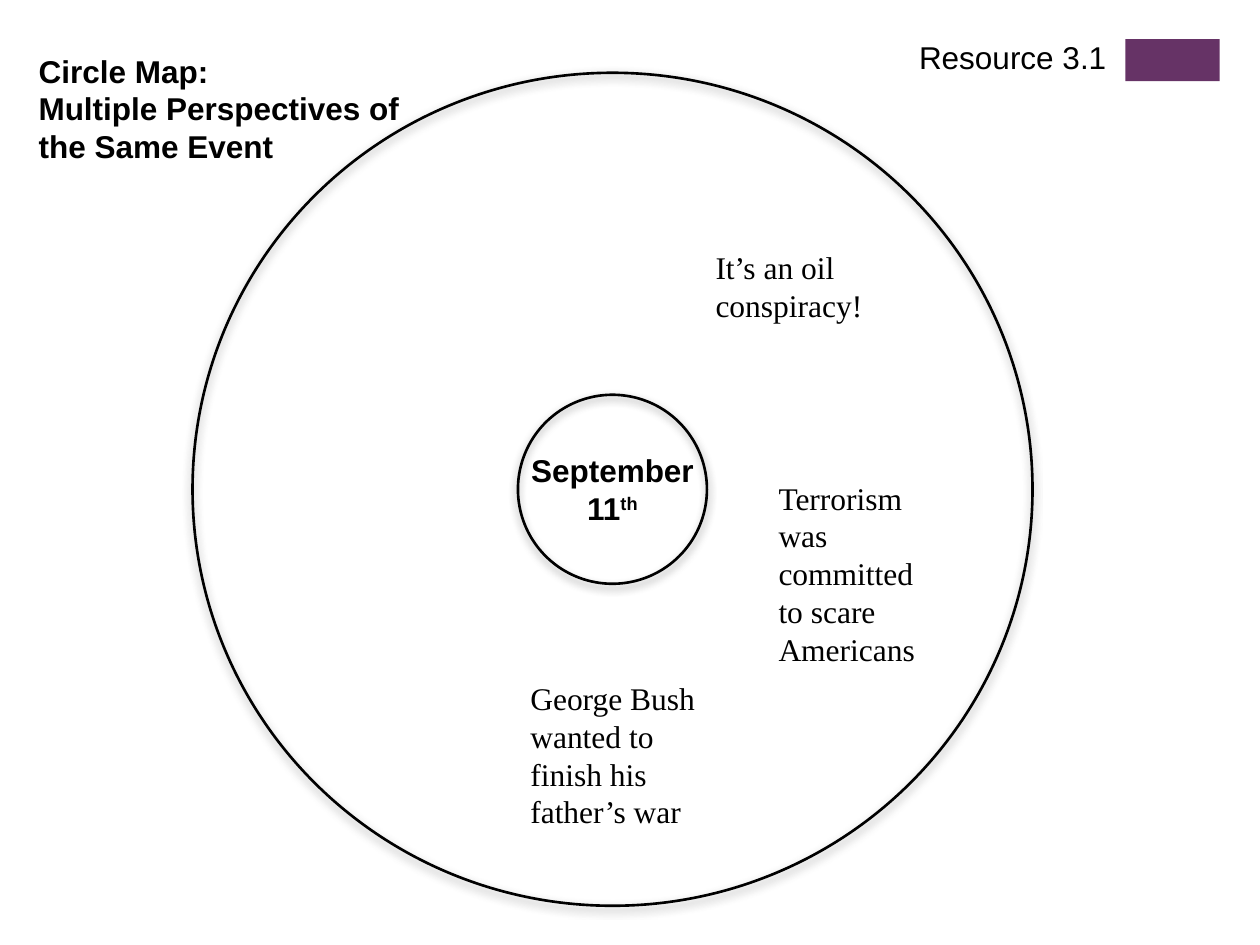
"""Build a circle map slide about perspectives on September 11th."""
import lxml.etree
import pptx
import pptx.dml.color
import pptx.enum.shapes
import pptx.enum.text
import pptx.oxml.ns
import pptx.util

Pt = pptx.util.Pt
SHAPE = pptx.enum.shapes.MSO_SHAPE
ALIGN = pptx.enum.text.PP_ALIGN

SLIDE_SIZE = (720, 540)
BLACK, PURPLE, GRAY = "000000", "663366", "808080"
CENTER = (350, 279.6)
RINGS = [(480, 476), (108, 108)]
TAB = (643, 22.3, 54, 24)

EVENT = [[("September 11", False), ("th", True)]]
EVENT_SIZE = (108, 51)
TITLE = ["Circle Map:", "Multiple Perspectives of the Same Event"]
TITLE_BOX = (15, 26, 235, 73)
RESOURCE = ["Resource 3.1"]
RESOURCE_BOX = (478, 18, 161.3, 29)
PERSPECTIVES = [
    ("It’s an oil conspiracy!", (401.8, 138.2, 102.5, 51)),
    ("Terrorism was committed to scare Americans", (437.8, 270, 108, 117)),
    ("George Bush wanted to finish his father’s war", (296, 384.5, 114, 94)),
]


def color(value):
    return pptx.dml.color.RGBColor.from_string(value)


def around(center, size):
    return tuple(c - s / 2 for c, s in zip(center, size)) + tuple(size)


def add_shape(slide, preset, box, fill=None, line=None):
    shape = slide.shapes.add_shape(preset, *map(Pt, box))
    shape.shadow.inherit = False
    if fill:
        shape.fill.solid()
        shape.fill.fore_color.rgb = color(fill)
    else:
        shape.fill.background()
    if line:
        shape.line.color.rgb = color(line)
        shape.line.width = Pt(1.5)
    else:
        shape.line.fill.background()
    return shape


def add_shadow(shape):
    qn = pptx.oxml.ns.qn
    effects = shape.element.spPr.find(qn("a:effectLst"))
    shadow = lxml.etree.SubElement(
        effects, qn("a:outerShdw"), blurRad=str(Pt(5)), dist=str(Pt(2)),
        dir="5400000", algn="ctr", rotWithShape="0")
    tint = lxml.etree.SubElement(shadow, qn("a:srgbClr"), val=GRAY)
    lxml.etree.SubElement(tint, qn("a:alpha"), val="75000")


def add_text(slide, paragraphs, box, font="Arial", bold=False, align=ALIGN.LEFT):
    frame = slide.shapes.add_textbox(*map(Pt, box)).text_frame
    frame.word_wrap = True
    frame.auto_size = pptx.enum.text.MSO_AUTO_SIZE.SHAPE_TO_FIT_TEXT
    for index, content in enumerate(paragraphs):
        paragraph = frame.add_paragraph() if index else frame.paragraphs[0]
        paragraph.alignment = align
        pieces = [(content, False)] if isinstance(content, str) else content
        for words, raised in pieces:
            run = paragraph.add_run()
            run.text = words
            run.font.name = font
            run.font.size = Pt(18)
            run.font.bold = bold
            run.font.color.rgb = color(BLACK)
            if raised:
                run.font._element.set("baseline", "30000")


def main():
    deck = pptx.Presentation()
    deck.slide_width, deck.slide_height = map(Pt, SLIDE_SIZE)
    slide = deck.slides.add_slide(deck.slide_layouts[6])
    add_shape(slide, SHAPE.RECTANGLE, TAB, fill=PURPLE)
    for size in RINGS:
        add_shadow(add_shape(slide, SHAPE.OVAL, around(CENTER, size), line=BLACK))
    add_text(slide, EVENT, around(CENTER, EVENT_SIZE), bold=True, align=ALIGN.CENTER)
    add_text(slide, TITLE, TITLE_BOX, bold=True)
    for words, box in PERSPECTIVES:
        add_text(slide, [words], box, font="Times New Roman")
    add_text(slide, RESOURCE, RESOURCE_BOX, align=ALIGN.RIGHT)
    deck.save("out.pptx")


if __name__ == "__main__":
    main()
